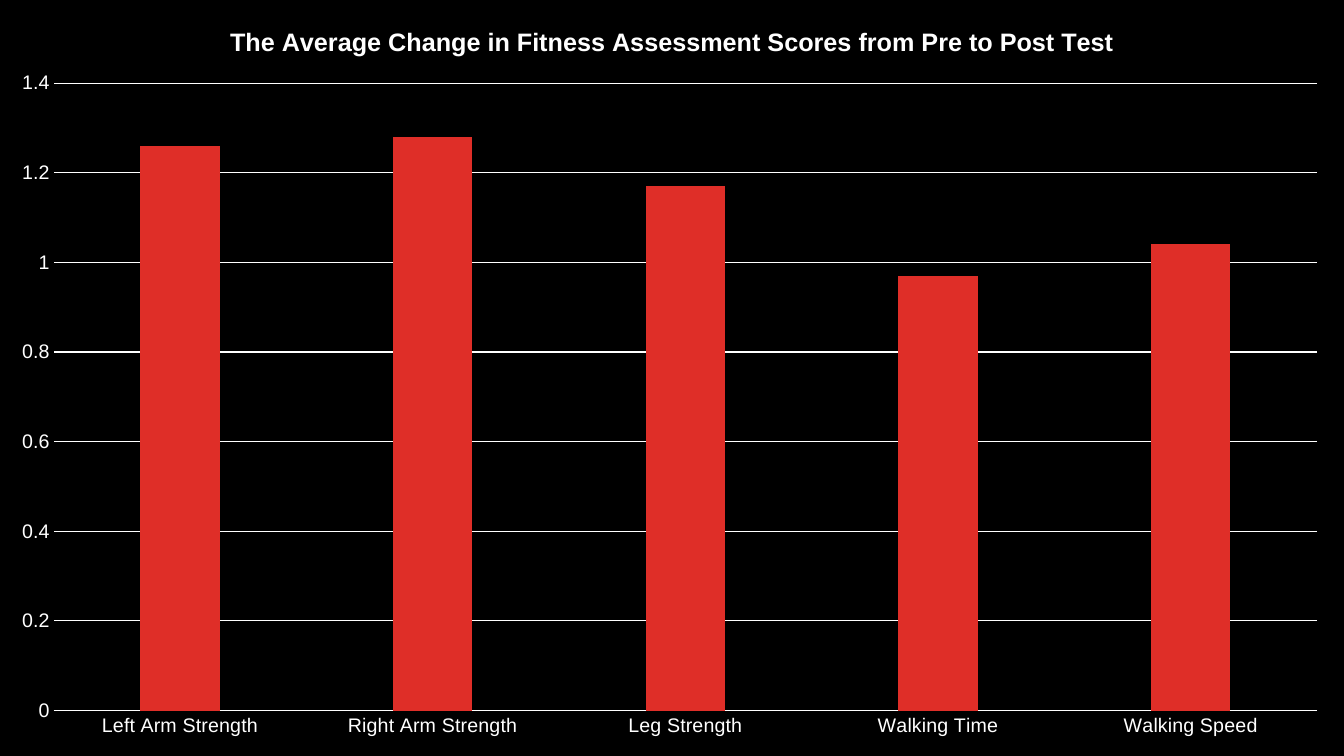
"""Builds a slide with a column chart of average fitness score changes."""
from lxml import etree
from pptx import Presentation
from pptx import util as u
from pptx.chart.data import CategoryChartData
from pptx.dml.color import RGBColor
from pptx.enum import chart as charts
from pptx.oxml.ns import qn

BLACK = RGBColor(0x00, 0x00, 0x00)
WHITE = RGBColor(0xFF, 0xFF, 0xFF)
RED = RGBColor(0xDF, 0x2E, 0x28)

TITLE = "The Average Change in Fitness Assessment Scores from Pre to Post Test"
SCORES = {
    "Left Arm Strength": 1.26,
    "Right Arm Strength": 1.28,
    "Leg Strength": 1.17,
    "Walking Time": 0.97,
    "Walking Speed": 1.04,
}


class ChartSlide:
    """Holds the style and the current slide."""

    font_name = "Arial"
    label_size = u.Pt(14)
    title_size = u.Pt(18)
    line_width = u.Pt(0.75)

    def __init__(self, presentation):
        self.slide = presentation.slides.add_slide(presentation.slide_layouts[6])
        fill = self.slide.background.fill
        fill.solid()
        fill.fore_color.rgb = BLACK

    def style_font(self, font, size, bold=False):
        font.name = self.font_name
        font.size = size
        font.bold = bold
        font.color.rgb = WHITE

    def style_line(self, line):
        line.color.rgb = WHITE
        line.width = self.line_width

    def add_title(self, chart, title):
        chart.has_title = True
        frame = chart.chart_title.text_frame
        frame.text = title
        self.style_font(frame.paragraphs[0].runs[0].font, self.title_size, True)
        chart.chart_title.include_in_layout = False

    def style_axis(self, axis):
        axis.major_tick_mark = charts.XL_TICK_MARK.NONE
        axis.minor_tick_mark = charts.XL_TICK_MARK.NONE
        self.style_font(axis.tick_labels.font, self.label_size)

    def place_plot(self, chart, left, top, width, height):
        plot_area = chart.element.find(".//" + qn("c:plotArea"))
        for layout in plot_area.findall(qn("c:layout")):
            plot_area.remove(layout)
        layout = etree.Element(qn("c:layout"))
        plot_area.insert(0, layout)
        manual = etree.SubElement(layout, qn("c:manualLayout"))
        settings = {"layoutTarget": "inner", "xMode": "edge", "yMode": "edge",
                    "x": left, "y": top, "w": width, "h": height}
        for tag, value in settings.items():
            etree.SubElement(manual, qn("c:" + tag)).set("val", str(value))

    def add_column_chart(self, title, scores, left, top, width, height):
        data = CategoryChartData()
        data.categories = list(scores)
        data.add_series("Series 1", list(scores.values()))
        chart = self.slide.shapes.add_chart(
            charts.XL_CHART_TYPE.COLUMN_CLUSTERED, left, top, width, height, data).chart
        self.style_font(chart.font, self.label_size)
        chart.has_legend = False
        self.add_title(chart, title)

        plot = chart.plots[0]
        plot.gap_width = 219
        plot.overlap = -27
        plot.vary_by_categories = False
        fill = plot.series[0].format.fill
        fill.solid()
        fill.fore_color.rgb = RED

        self.style_axis(chart.category_axis)
        self.style_line(chart.category_axis.format.line)
        value_axis = chart.value_axis
        self.style_axis(value_axis)
        value_axis.format.line.fill.background()
        value_axis.minimum_scale = 0
        value_axis.maximum_scale = 1.4
        value_axis.major_unit = 0.2
        value_axis.tick_labels.number_format = "General"
        value_axis.tick_labels.number_format_is_linked = False
        value_axis.has_major_gridlines = True
        self.style_line(value_axis.major_gridlines.format.line)
        return chart


def main():
    presentation = Presentation()
    presentation.slide_width = u.Inches(13.33)
    presentation.slide_height = u.Inches(7.5)
    fitness = ChartSlide(presentation)
    chart = fitness.add_column_chart(
        TITLE, SCORES, u.Inches(0), u.Inches(0),
        presentation.slide_width, presentation.slide_height)
    fitness.place_plot(chart, 0.04, 0.11, 0.94, 0.83)
    presentation.save("out.pptx")


if __name__ == "__main__":
    main()
